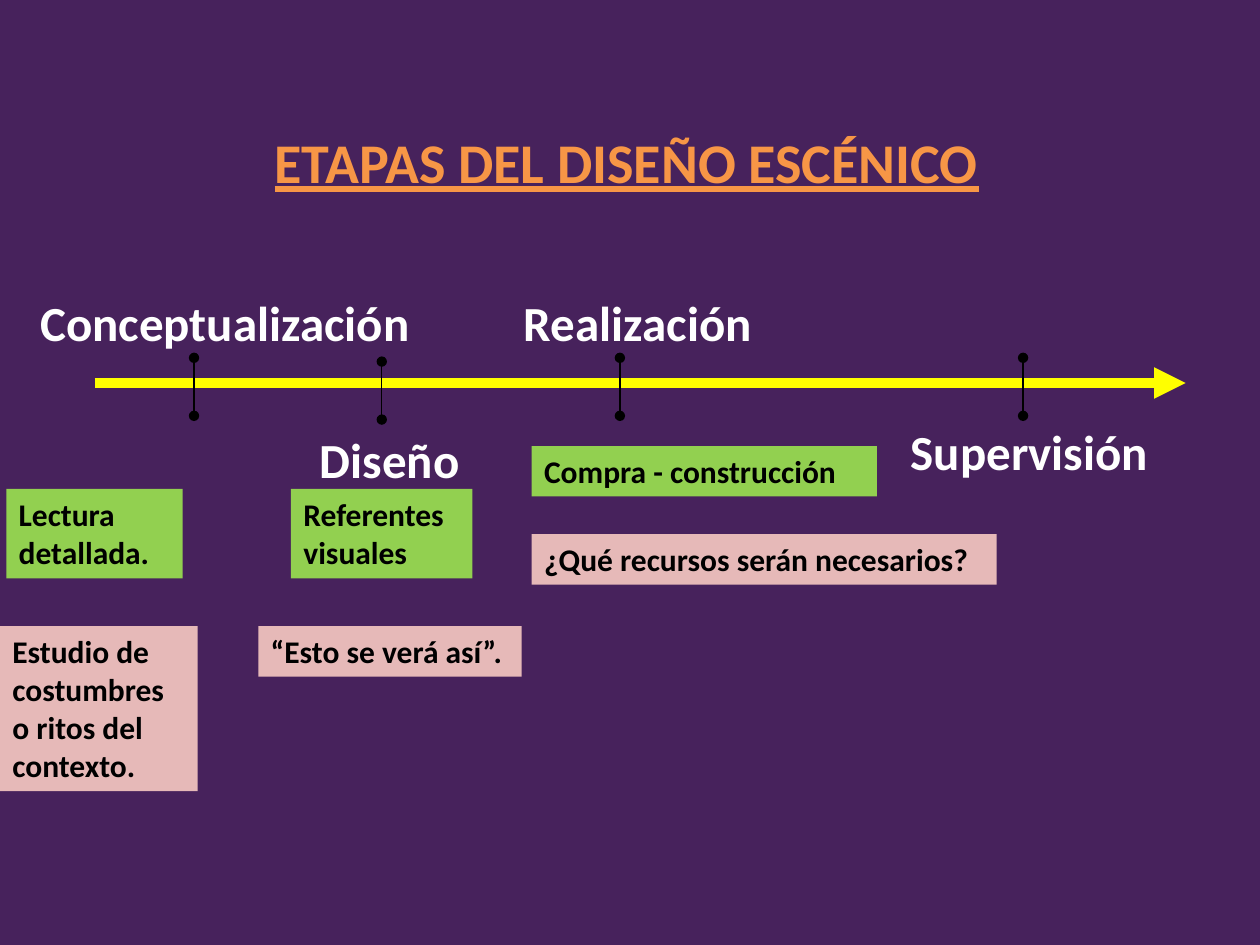
"""Builds a slide with the timeline of the stages of stage design."""
from typing import NamedTuple

from lxml import etree
from pptx import Presentation
from pptx.dml.color import RGBColor
from pptx.enum import shapes, text
from pptx.oxml import ns
from pptx.util import Inches, Pt

PURPLE = RGBColor(0x47, 0x22, 0x5C)
YELLOW = RGBColor(0xFF, 0xFF, 0x00)
ORANGE = RGBColor(0xF7, 0x96, 0x46)
GREEN = RGBColor(0x92, 0xD0, 0x50)
PINK = RGBColor(0xE6, 0xB9, 0xB8)
WHITE = RGBColor(0xFF, 0xFF, 0xFF)
BLACK = RGBColor(0x00, 0x00, 0x00)

AXIS_Y = 3.04
TICK_HEIGHT = 0.46
LABEL_HEIGHT = 0.57


class Stage(NamedTuple):
    name: str
    left: float
    top: float
    width: float
    tick_x: float
    tick_top: float


class Note(NamedTuple):
    wording: str
    left: float
    top: float
    width: float
    height: float
    fill: RGBColor


STAGES = [
    Stage("Conceptualización", 0.22, 2.27, 3.31, 1.54, 2.84),
    Stage("Diseño", 2.44, 3.36, 1.49, 3.03, 2.87),
    Stage("Realización", 4.06, 2.27, 3.07, 4.92, 2.84),
    Stage("Supervisión", 7.13, 3.3, 2.27, 8.12, 2.84),
]
NOTES = [
    Note("Lectura detallada.", 0.05, 3.88, 1.4, 0.71, GREEN),
    Note("Estudio de costumbres o ritos del contexto.", 0, 4.97, 1.57, 1.31, PINK),
    Note("Referentes visuales", 2.31, 3.88, 1.44, 0.71, GREEN),
    Note("“Esto se verá así”.", 2.05, 4.97, 2.09, 0.4, PINK),
    Note("Compra - construcción", 4.22, 3.54, 2.74, 0.4, GREEN),
    Note("¿Qué recursos serán necesarios?", 4.22, 4.24, 3.69, 0.4, PINK),
]


def write(box, wording: str, size: float, color: RGBColor, underline: bool = False) -> None:
    """Fill a box with bold, left-aligned text starting at its top."""
    frame = box.text_frame
    frame.text = wording
    frame.word_wrap = True
    frame.auto_size = text.MSO_AUTO_SIZE.SHAPE_TO_FIT_TEXT
    frame.vertical_anchor = text.MSO_ANCHOR.TOP
    para = frame.paragraphs[0]
    para.alignment = text.PP_ALIGN.LEFT
    font = para.runs[0].font
    font.name = "Calibri"
    font.size = Pt(size)
    font.bold = True
    font.underline = underline or None
    font.color.rgb = color


def draw_line(page, start: tuple[float, float], end: tuple[float, float],
              color: RGBColor, weight: float, **ends: str) -> None:
    """Draw a straight line, with headEnd and tailEnd given by name."""
    points = [Inches(value) for value in (*start, *end)]
    line = page.shapes.add_connector(shapes.MSO_CONNECTOR.STRAIGHT, *points)
    line.line.color.rgb = color
    line.line.width = Pt(weight)
    outline = line.line._get_or_add_ln()
    for tag, kind in ends.items():
        etree.SubElement(outline, ns.qn(f"a:{tag}"), type=kind)
    etree.SubElement(line._element.spPr, ns.qn("a:effectLst"))


def draw_title(page, wording: str) -> None:
    """Place the underlined slide title."""
    title = page.shapes.title
    title.left, title.top = Inches(2.08), Inches(0.96)
    title.width, title.height = Inches(5.83), Inches(0.64)
    write(title, wording, 32, ORANGE, underline=True)


def draw_stage(page, stage: Stage) -> None:
    """Draw a stage's label and its tick on the timeline."""
    label = page.shapes.add_textbox(Inches(stage.left), Inches(stage.top),
                                    Inches(stage.width), Inches(LABEL_HEIGHT))
    write(label, stage.name, 28, WHITE)
    draw_line(page, (stage.tick_x, stage.tick_top),
              (stage.tick_x, stage.tick_top + TICK_HEIGHT),
              BLACK, 0.75, headEnd="oval", tailEnd="oval")


def draw_note(page, note: Note) -> None:
    """Draw a filled box with a note on a stage."""
    box = page.shapes.add_shape(shapes.MSO_SHAPE.RECTANGLE,
                                Inches(note.left), Inches(note.top),
                                Inches(note.width), Inches(note.height))
    box.shadow.inherit = False
    box.fill.solid()
    box.fill.fore_color.rgb = note.fill
    box.line.fill.background()
    write(box, note.wording, 18, BLACK)


def main() -> None:
    """Build and save the deck."""
    deck = Presentation()
    deck.slide_width, deck.slide_height = Inches(10), Inches(7.5)
    page = deck.slides.add_slide(deck.slide_layouts.get_by_name("Title Only"))
    page.background.fill.solid()
    page.background.fill.fore_color.rgb = PURPLE
    draw_title(page, "ETAPAS DEL DISEÑO ESCÉNICO")
    draw_line(page, (0.75, AXIS_Y), (9.41, AXIS_Y), YELLOW, 6, tailEnd="triangle")
    for stage in STAGES:
        draw_stage(page, stage)
    for note in NOTES:
        draw_note(page, note)
    deck.save("out.pptx")


if __name__ == "__main__":
    main()
